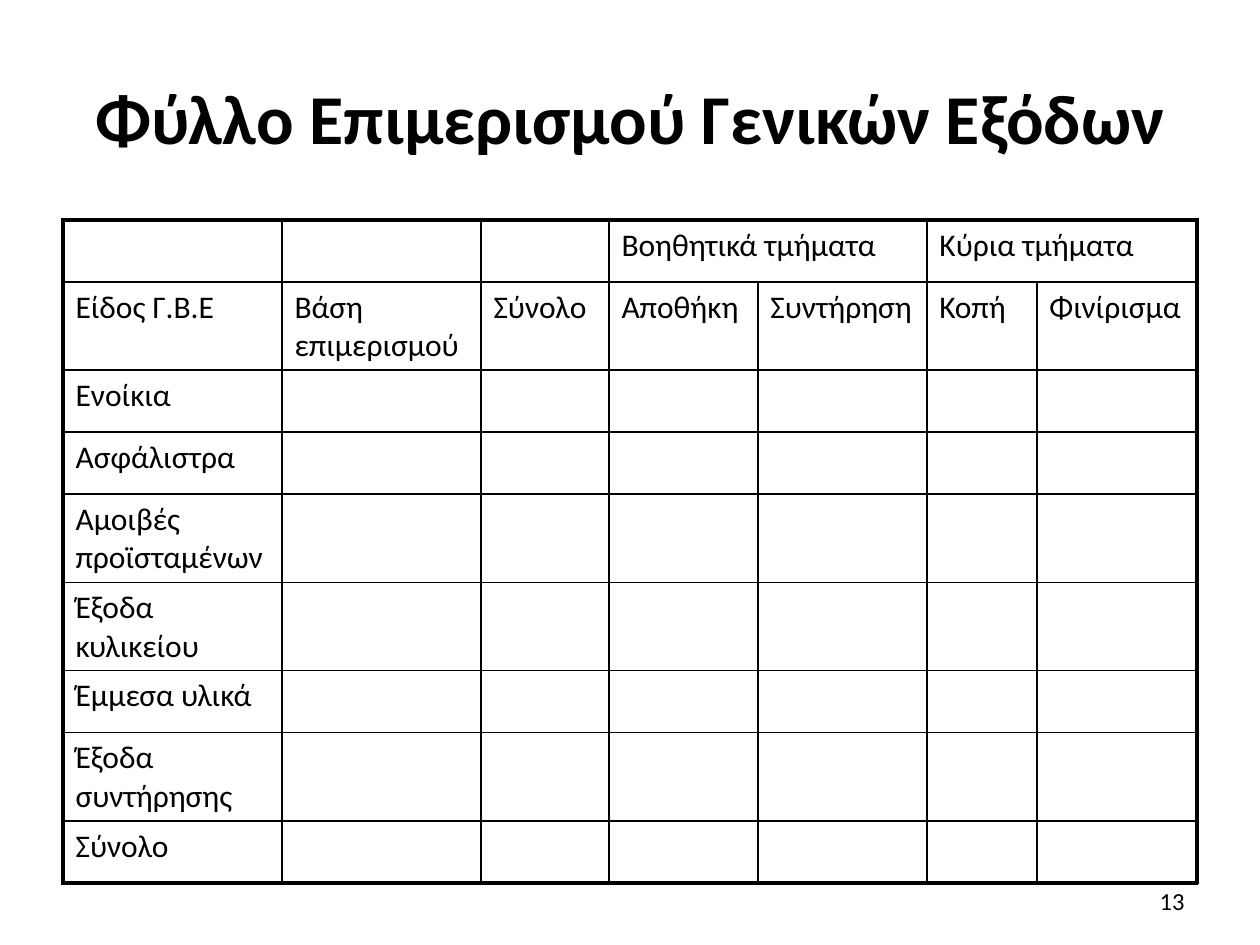
from dataclasses import dataclass

from lxml import etree
from pptx import Presentation
from pptx import util as u
from pptx.dml.color import RGBColor
from pptx.enum import text
from pptx.oxml import ns

EMU_PER_PX = 914400 / 126
FONT = "Calibri"
BLACK = "000000"
THIN, THICK = 1, 2.25
COLUMN_WIDTHS = [219, 199, 128, 149, 169, 110, 160]
ROW_HEIGHT = 62
HEADINGS = ["Είδος Γ.Β.Ε", "Βάση επιμερισμού", "Σύνολο", "Αποθήκη",
            "Συντήρηση", "Κοπή", "Φινίρισμα"]
DEPARTMENT_GROUPS = {3: "Βοηθητικά τμήματα", 5: "Κύρια τμήματα"}
EXPENSES = ["Ενοίκια", "Ασφάλιστρα", "Αμοιβές προϊσταμένων", "Έξοδα κυλικείου",
            "Έμμεσα υλικά", "Έξοδα συντήρησης", "Σύνολο"]


@dataclass
class Label:
    words: str
    left: int
    top: int
    width: int
    height: int
    size: int
    align: text.PP_ALIGN
    bold: bool = False


LABELS = [
    Label("13", 903, 876, 294, 50, 14, text.PP_ALIGN.RIGHT),
    Label("Φύλλο Επιμερισμού Γενικών Εξόδων", 63, 38, 1134, 158, 40,
          text.PP_ALIGN.CENTER, True),
]


def px(length: int) -> u.Emu:
    return u.Emu(round(length * EMU_PER_PX))


def colour(value: str) -> RGBColor:
    return RGBColor.from_string(value)


def style_text(paragraph, size: int, bold: bool = False) -> None:
    for run in paragraph.runs:
        run.font.name = FONT
        run.font.size = u.Pt(size)
        run.font.bold = bold
        run.font.color.rgb = colour(BLACK)


def draw_label(slide, label: Label) -> None:
    shape = slide.shapes.add_textbox(px(label.left), px(label.top),
                                     px(label.width), px(label.height))
    frame = shape.text_frame
    frame.word_wrap = True
    frame.vertical_anchor = text.MSO_ANCHOR.MIDDLE
    frame.text = label.words
    paragraph = frame.paragraphs[0]
    paragraph.alignment = label.align
    style_text(paragraph, label.size, label.bold)


def set_borders(cell, widths: dict[str, float]) -> None:
    properties = cell._tc.get_or_add_tcPr()
    for position, (side, width) in enumerate(widths.items()):
        line = etree.Element(ns.qn(f"a:ln{side}"), w=str(u.Pt(width)))
        fill = etree.SubElement(line, ns.qn("a:solidFill"))
        etree.SubElement(fill, ns.qn("a:srgbClr"), val=BLACK)
        properties.insert(position, line)


def draw_expense_table(slide) -> None:
    groups = [DEPARTMENT_GROUPS.get(column, "") for column in range(len(HEADINGS))]
    blanks = [""] * (len(HEADINGS) - 1)
    rows = [groups, HEADINGS] + [[expense] + blanks for expense in EXPENSES]
    last_row, last_column = len(rows) - 1, len(HEADINGS) - 1
    table = slide.shapes.add_table(
        len(rows), len(HEADINGS), px(63), px(220),
        px(sum(COLUMN_WIDTHS)), px(ROW_HEIGHT * len(rows))).table
    table.first_row = False
    table.horz_banding = False
    for column, width in zip(table.columns, COLUMN_WIDTHS):
        column.width = px(width)
    for row in table.rows:
        row.height = px(ROW_HEIGHT)
    for column in DEPARTMENT_GROUPS:
        table.cell(0, column).merge(table.cell(0, column + 1))

    for row_index, row in enumerate(rows):
        for column_index, words in enumerate(row):
            cell = table.cell(row_index, column_index)
            cell.fill.background()
            right_edge = column_index + cell.span_width - 1 if cell.is_merge_origin else column_index
            set_borders(cell, {
                "L": THICK if column_index == 0 else THIN,
                "R": THICK if right_edge == last_column else THIN,
                "T": THICK if row_index == 0 else THIN,
                "B": THICK if row_index == last_row else THIN,
            })
            if words:
                cell.text_frame.text = words
                style_text(cell.text_frame.paragraphs[0], 18)


def main() -> None:
    presentation = Presentation()
    presentation.slide_width = px(1260)
    presentation.slide_height = px(945)
    slide = presentation.slides.add_slide(presentation.slide_layouts[6])
    for label in LABELS:
        draw_label(slide, label)
    draw_expense_table(slide)
    presentation.save("out.pptx")


if __name__ == "__main__":
    main()
